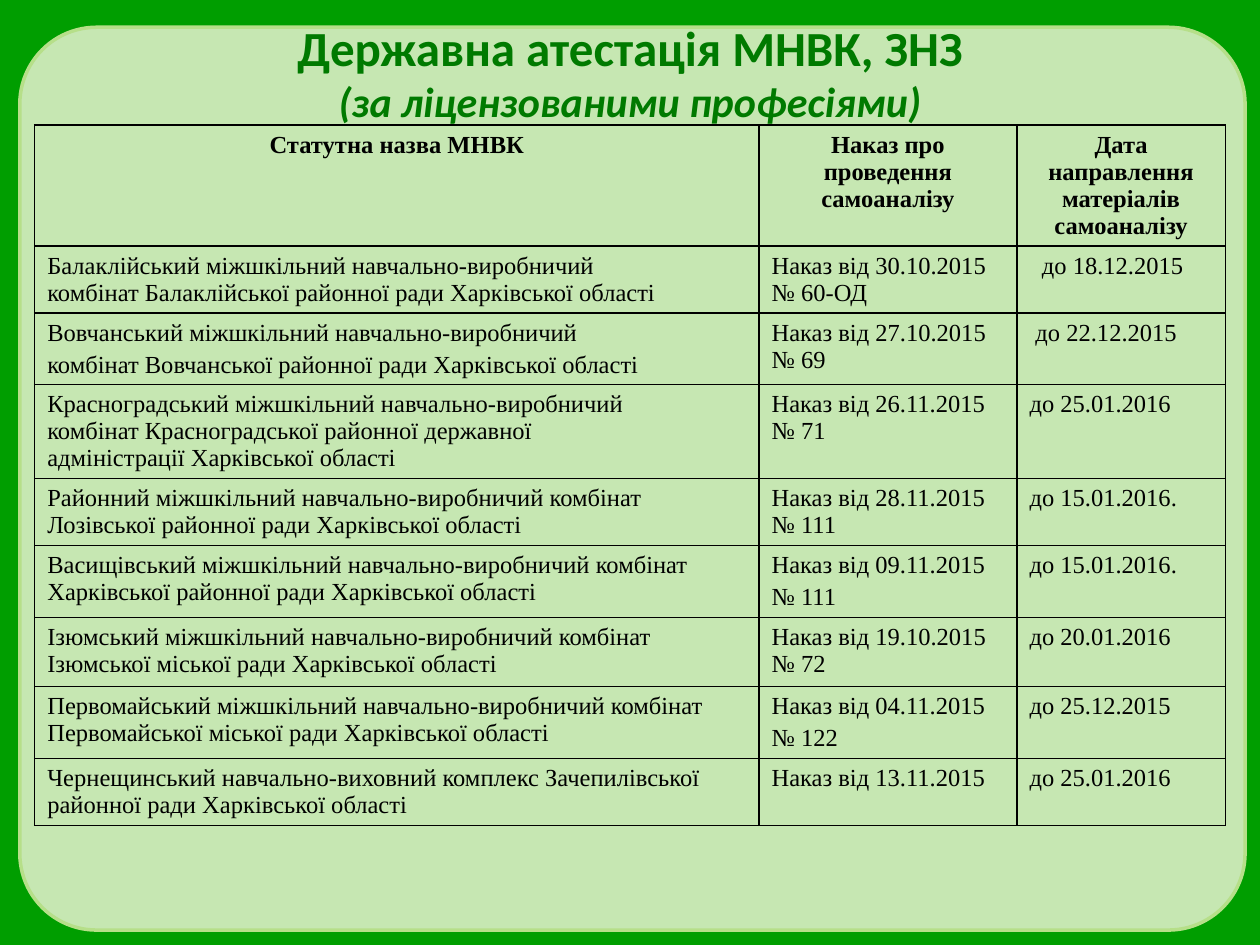
from dataclasses import dataclass

from lxml import etree
from pptx import Presentation
from pptx import util as u
from pptx.dml.color import RGBColor
from pptx.enum import shapes, text
from pptx.oxml.ns import qn


@dataclass(frozen=True)
class Theme:
    """Colours, fonts and type sizes of the slide."""
    background: str = "009E00"
    panel: str = "DCF0C6"
    panel_opacity: int = 90
    panel_line: str = "B6DF89"
    title: str = "007A00"
    ink: str = "000000"
    title_font: str = "Calibri"
    table_font: str = "Times New Roman"
    title_size: int = 28
    subtitle_size: int = 24
    table_size: int = 14
    loose_gap: float = 2.8


@dataclass(frozen=True)
class Row:
    """One institution: name, order and date, with optional spacing."""
    name: tuple
    order: tuple
    date: str
    loose_column: int = -1
    date_indent: float = 0

    def cells(self):
        """Return the lines of each cell."""
        return self.name, self.order, (self.date,)


HEADER = (
    ("Статутна назва МНВК",),
    ("Наказ про", "проведення", "самоаналізу"),
    ("Дата", "направлення", "матеріалів", "самоаналізу"),
)
ROWS = (
    Row(("Балаклійський міжшкільний навчально-виробничий",
         "комбінат Балаклійської районної ради Харківської області"),
        ("Наказ від 30.10.2015", "№ 60-ОД"), "до 18.12.2015", date_indent=0.25),
    Row(("Вовчанський міжшкільний навчально-виробничий",
         "комбінат Вовчанської районної ради Харківської області"),
        ("Наказ від 27.10.2015", "№ 69"), "до 22.12.2015", loose_column=0, date_indent=0.12),
    Row(("Красноградський міжшкільний навчально-виробничий",
         "комбінат Красноградської районної державної",
         "адміністрації Харківської області"),
        ("Наказ від 26.11.2015", "№ 71"), "до 25.01.2016"),
    Row(("Районний міжшкільний навчально-виробничий комбінат",
         "Лозівської районної ради Харківської області"),
        ("Наказ від 28.11.2015", "№ 111"), "до 15.01.2016."),
    Row(("Васищівський міжшкільний навчально-виробничий комбінат",
         "Харківської районної ради Харківської області"),
        ("Наказ від 09.11.2015", "№ 111"), "до 15.01.2016.", loose_column=1),
    Row(("Ізюмський міжшкільний навчально-виробничий комбінат",
         "Ізюмської міської ради Харківської області"),
        ("Наказ від 19.10.2015", "№ 72"), "до 20.01.2016"),
    Row(("Первомайський міжшкільний навчально-виробничий комбінат",
         "Первомайської міської ради Харківської області"),
        ("Наказ від 04.11.2015", "№ 122"), "до 25.12.2015", loose_column=1),
    Row(("Чернещинський навчально-виховний комплекс Зачепилівської",
         "районної ради Харківської області"),
        ("Наказ від 13.11.2015",), "до 25.01.2016"),
)
COLUMN_WIDTHS = (14.6, 5.2, 4.2)
ROW_HEIGHTS = (2.43, 1.35, 1.44, 1.87, 1.35, 1.44, 1.4, 1.44, 1.35)


class SlideBuilder:
    """Draws styled elements on the current slide."""

    def __init__(self, presentation, theme):
        """Add a title-only slide with a plain background."""
        self.theme = theme
        self.slide = presentation.slides.add_slide(presentation.slide_layouts[5])
        fill = self.slide.background.fill
        fill.solid()
        fill.fore_color.rgb = RGBColor.from_string(theme.background)

    def panel(self, left, top, width, height):
        """Draw the translucent rounded panel behind everything else."""
        shape = self.slide.shapes.add_shape(
            shapes.MSO_SHAPE.ROUNDED_RECTANGLE, *map(u.Cm, (left, top, width, height)))
        shape.adjustments[0] = 0.085
        shape.shadow.inherit = False
        shape.fill.solid()
        shape.fill.fore_color.rgb = RGBColor.from_string(self.theme.panel)
        colour = shape.fill._xPr.find(qn("a:solidFill"))[0]
        etree.SubElement(colour, qn("a:alpha"), val=str(self.theme.panel_opacity * 1000))
        shape.line.color.rgb = RGBColor.from_string(self.theme.panel_line)
        shape.line.width = u.Pt(2)
        self.slide.shapes._spTree.insert(2, shape._element)

    def title(self, heading, subtitle, left, top, width, height):
        """Fill the title placeholder with a heading and an italic line."""
        shape = self.slide.shapes.title
        shape.left, shape.top, shape.width, shape.height = map(u.Cm, (left, top, width, height))
        frame = shape.text_frame
        frame.auto_size = text.MSO_AUTO_SIZE.NONE
        frame.vertical_anchor = text.MSO_ANCHOR.MIDDLE
        paragraph = frame.paragraphs[0]
        paragraph.alignment = text.PP_ALIGN.CENTER
        self.font(paragraph, self.theme.title_font, self.theme.title, bold=True)
        first = paragraph.add_run()
        first.text, first.font.size = heading, u.Pt(self.theme.title_size)
        paragraph.add_line_break()
        second = paragraph.add_run()
        second.text, second.font.size = subtitle, u.Pt(self.theme.subtitle_size)
        second.font.italic = True

    def font(self, paragraph, name, colour, size=None, bold=False):
        """Set the font shared by all runs of a paragraph."""
        font = paragraph.font
        font.name, font.bold = name, bold
        font.color.rgb = RGBColor.from_string(colour)
        if size:
            font.size = u.Pt(size)

    def table(self, header, rows, left, top, widths, heights):
        """Draw the bordered table."""
        table = self.slide.shapes.add_table(
            len(heights), len(widths), u.Cm(left), u.Cm(top),
            u.Cm(sum(widths)), u.Cm(sum(heights))).table
        table.first_row = table.horz_banding = False
        for column, width in zip(table.columns, widths):
            column.width = u.Cm(width)
        for row, height in zip(table.rows, heights):
            row.height = u.Cm(height)
        for column, lines in enumerate(header):
            self.cell(table.cell(0, column), lines, heading=True)
        for index, row in enumerate(rows, 1):
            for column, lines in enumerate(row.cells()):
                self.cell(table.cell(index, column), lines,
                          loose=column == row.loose_column,
                          indent=row.date_indent if column == 2 else 0)

    def cell(self, cell, lines, heading=False, loose=False, indent=0):
        """Write one paragraph per line into an unfilled bordered cell."""
        frame = cell.text_frame
        for index, line in enumerate(lines):
            paragraph = frame.add_paragraph() if index else frame.paragraphs[0]
            paragraph.text = line
            paragraph.alignment = text.PP_ALIGN.CENTER if heading else text.PP_ALIGN.LEFT
            if indent:
                paragraph._p.get_or_add_pPr().set("marL", str(u.Cm(indent)))
            if loose and index:
                paragraph.space_before = u.Pt(self.theme.loose_gap)
            self.font(paragraph, self.theme.table_font, self.theme.ink,
                      self.theme.table_size, heading)
        properties = cell._tc.get_or_add_tcPr()
        for side in ("lnL", "lnR", "lnT", "lnB"):
            border = etree.SubElement(properties, qn(f"a:{side}"), w=str(u.Pt(1)))
            fill = etree.SubElement(border, qn("a:solidFill"))
            etree.SubElement(fill, qn("a:srgbClr"), val=self.theme.ink)
        cell.fill.background()


def main():
    """Build and save the presentation."""
    presentation = Presentation()
    presentation.slide_width, presentation.slide_height = u.Cm(25.4), u.Cm(19.05)
    builder = SlideBuilder(presentation, Theme())
    builder.panel(0.4, 0.55, 24.7, 18.2)
    builder.title("Державна атестація МНВК, ЗНЗ", "(за ліцензованими професіями)",
                  1.27, 0.76, 22.86, 1.37)
    builder.table(HEADER, ROWS, 0.7, 2.52, COLUMN_WIDTHS, ROW_HEIGHTS)
    presentation.save("out.pptx")


if __name__ == "__main__":
    main()
